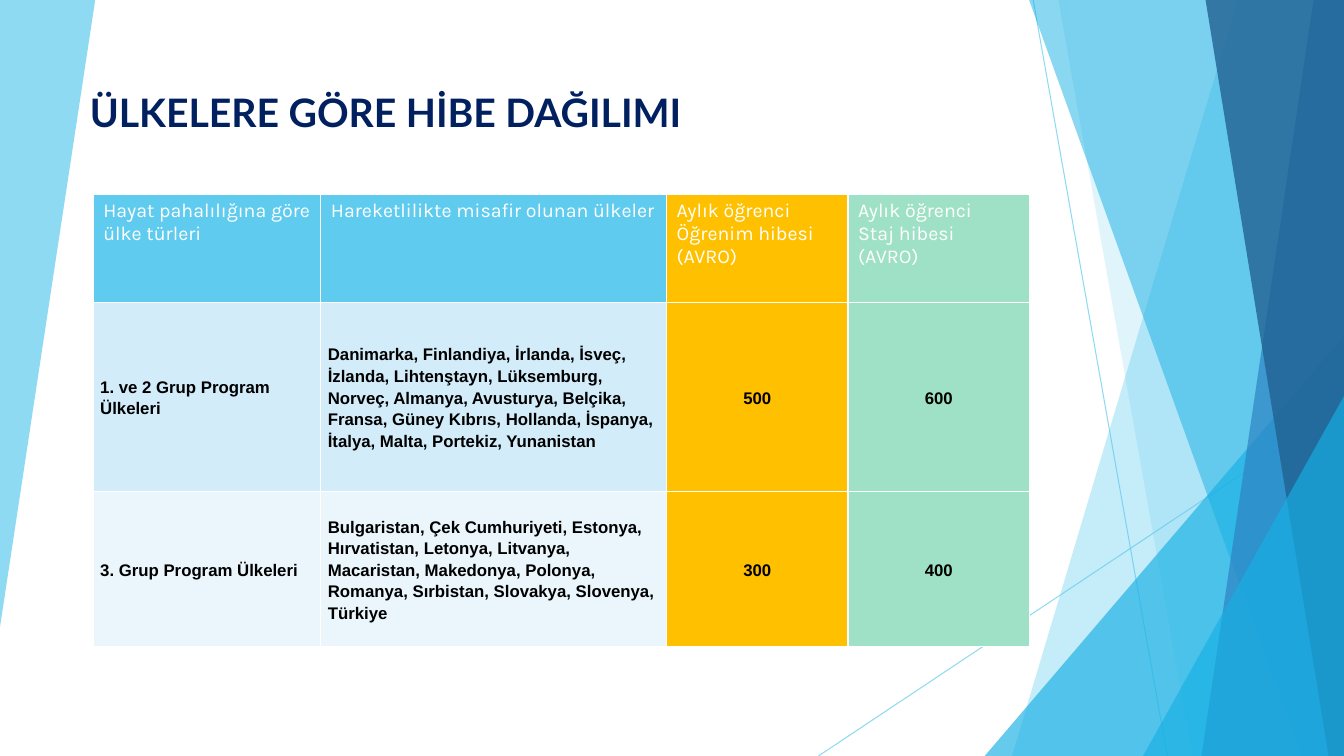
from dataclasses import dataclass

from pptx import Presentation
from pptx.dml.color import RGBColor
from pptx.enum.shapes import MSO_CONNECTOR as Connector, MSO_SHAPE as Preset
from pptx.enum.text import MSO_ANCHOR as Anchor, MSO_AUTO_SIZE as AutoSize, PP_ALIGN as Align
from pptx.oxml.ns import qn
from pptx.oxml.xmlchemy import OxmlElement
from pptx.slide import Slide
from pptx.table import Table, _Cell as Cell
from pptx.util import Pt

WIDTH, HEIGHT = 960, 540
COLORS = {
    "sky": "5FCBEF", "cyan": "17B0E4", "blue": "2E83C3", "steel": "226292",
    "navy": "002060", "white": "FFFFFF", "black": "000000", "amber": "FFC000",
    "mint": "9FE1C6", "pale": "D2ECF9", "paler": "EAF6FC",
}


@dataclass
class Panel:
    points: list[tuple[float, float]]
    color: str
    opacity: int


@dataclass
class Triangle:
    left: float
    top: float
    color: str
    opacity: int


@dataclass
class Ray:
    start: tuple[float, float]
    end: tuple[float, float]


@dataclass
class Row:
    height: float
    fills: list[str]
    texts: list[str]


def side_panel(top_left: float, bottom_left: float, color: str, opacity: int) -> Panel:
    """Panel that reaches the right slide edge, with a slanted left side."""
    points = [(top_left, 0), (WIDTH, 0), (WIDTH, HEIGHT), (bottom_left, HEIGHT)]
    return Panel(points, color, opacity)


DECORATION = [
    Panel([(0, 0), (68, 0), (0, 447.8)], "sky", 70),
    Ray((738, 0), (833.8, HEIGHT)),
    Ray((WIDTH, 290.2), (584.6, HEIGHT)),
    side_panel(884.2, 722.9, "sky", 36),
    side_panel(756, 851.8, "sky", 20),
    Triangle(703.4, 239.8, "cyan", 66),
    side_panel(735.1, 929.5, "cyan", 50),
    side_panel(938.2, 858.2, "blue", 70),
    side_panel(861.1, 949, "steel", 80),
    Triangle(816.5, 283, "cyan", 66),
]

COLUMN_WIDTHS = [162.6, 247, 129.6, 129.6]
ROWS = [
    Row(77, ["sky", "sky", "amber", "mint"], [
        "Hayat pahalılığına göre ülke türleri",
        "Hareketlilikte misafir olunan ülkeler",
        "Aylık öğrenci Öğrenim hibesi (AVRO)",
        "Aylık öğrenci \vStaj hibesi (AVRO)",
    ]),
    Row(135, ["pale", "pale", "amber", "mint"], [
        "1. ve 2 Grup Program Ülkeleri",
        "Danimarka, Finlandiya, İrlanda, İsveç, İzlanda, Lihtenştayn, Lüksemburg, "
        "Norveç, Almanya, Avusturya, Belçika, Fransa, Güney Kıbrıs, Hollanda, "
        "İspanya, İtalya, Malta, Portekiz, Yunanistan",
        "500",
        "600",
    ]),
    Row(111, ["paler", "paler", "amber", "mint"], [
        "3. Grup Program Ülkeleri",
        "Bulgaristan, Çek Cumhuriyeti, Estonya, Hırvatistan, Letonya, Litvanya, "
        "Macaristan, Makedonya, Polonya, Romanya, Sırbistan, Slovakya, Slovenya, "
        "Türkiye",
        "300",
        "400",
    ]),
]


def rgb(name: str) -> RGBColor:
    return RGBColor.from_string(COLORS[name])


def set_opacity(shape, percent: int) -> None:
    for color in shape._element.spPr.iter(qn("a:srgbClr")):
        alpha = OxmlElement("a:alpha")
        alpha.set("val", str(percent * 1000))
        color.append(alpha)


def fill_shape(shape, color: str, opacity: int) -> None:
    shape.shadow.inherit = False
    shape.fill.solid()
    shape.fill.fore_color.rgb = rgb(color)
    shape.line.fill.background()
    set_opacity(shape, opacity)


def draw_panel(slide: Slide, panel: Panel) -> None:
    first, *others = [(Pt(x), Pt(y)) for x, y in panel.points]
    builder = slide.shapes.build_freeform(*first)
    builder.add_line_segments(others, close=True)
    fill_shape(builder.convert_to_shape(), panel.color, panel.opacity)


def draw_triangle(slide: Slide, triangle: Triangle) -> None:
    """Right triangle that fills the lower right corner of the slide."""
    shape = slide.shapes.add_shape(
        Preset.ISOSCELES_TRIANGLE, Pt(triangle.left), Pt(triangle.top),
        Pt(WIDTH - triangle.left), Pt(HEIGHT - triangle.top))
    shape.adjustments[0] = 1
    fill_shape(shape, triangle.color, triangle.opacity)


def draw_ray(slide: Slide, ray: Ray) -> None:
    ends = [Pt(value) for value in (*ray.start, *ray.end)]
    line = slide.shapes.add_connector(Connector.STRAIGHT, *ends)
    line.line.color.rgb = rgb("sky")
    line.line.width = Pt(0.75)
    set_opacity(line, 70)
    line._element.spPr.append(OxmlElement("a:effectLst"))


def write_title(slide: Slide, text: str) -> None:
    title = slide.shapes.title
    title.left, title.top, title.width, title.height = Pt(57), Pt(45.4), Pt(679), Pt(54.7)
    frame = title.text_frame
    frame.text = text
    frame.auto_size = AutoSize.NONE
    frame.vertical_anchor = Anchor.BOTTOM
    para = frame.paragraphs[0]
    para.alignment = Align.LEFT
    para.font.name, para.font.size, para.font.bold = "Lato", Pt(28), True
    para.font.color.rgb = rgb("navy")


def add_borders(cell: Cell) -> None:
    properties = cell._tc.get_or_add_tcPr()
    for index, side in enumerate(("a:lnL", "a:lnR", "a:lnT", "a:lnB")):
        border = OxmlElement(side)
        border.set("w", str(Pt(1)))
        fill = OxmlElement("a:solidFill")
        color = OxmlElement("a:srgbClr")
        color.set("val", COLORS["white"])
        fill.append(color)
        border.append(fill)
        properties.insert(index, border)


def write_cell(cell: Cell, text: str, fill: str, is_header: bool) -> None:
    cell.fill.solid()
    cell.fill.fore_color.rgb = rgb(fill)
    add_borders(cell)
    cell.text = text
    para = cell.text_frame.paragraphs[0]
    font = para.font
    font.name, font.size = ("Karla", Pt(14)) if is_header else ("Arial", Pt(12))
    font.bold = not is_header
    font.color.rgb = rgb("white" if is_header else "black")
    if not is_header:
        cell.vertical_anchor = Anchor.MIDDLE
        cell.margin_left = cell.margin_right = Pt(5)
        cell.margin_top = cell.margin_bottom = 0
        para.line_spacing = 1.15
        para.alignment = Align.CENTER if text.isdigit() else Align.LEFT


def draw_grants(slide: Slide) -> None:
    table: Table = slide.shapes.add_table(
        len(ROWS), len(COLUMN_WIDTHS), Pt(66.6), Pt(139),
        Pt(sum(COLUMN_WIDTHS)), Pt(sum(row.height for row in ROWS))).table
    for column, width in zip(table.columns, COLUMN_WIDTHS):
        column.width = Pt(width)
    for index, row in enumerate(ROWS):
        table.rows[index].height = Pt(row.height)
        for cell, text, fill in zip(table.rows[index].cells, row.texts, row.fills):
            write_cell(cell, text, fill, is_header=index == 0)


def main() -> None:
    deck = Presentation()
    deck.slide_width, deck.slide_height = Pt(WIDTH), Pt(HEIGHT)
    slide = deck.slides.add_slide(deck.slide_layouts[5])
    painters = {Panel: draw_panel, Triangle: draw_triangle, Ray: draw_ray}
    for item in DECORATION:
        painters[type(item)](slide, item)
    write_title(slide, "ÜLKELERE GÖRE HİBE DAĞILIMI")
    draw_grants(slide)
    deck.save("out.pptx")


if __name__ == "__main__":
    main()
